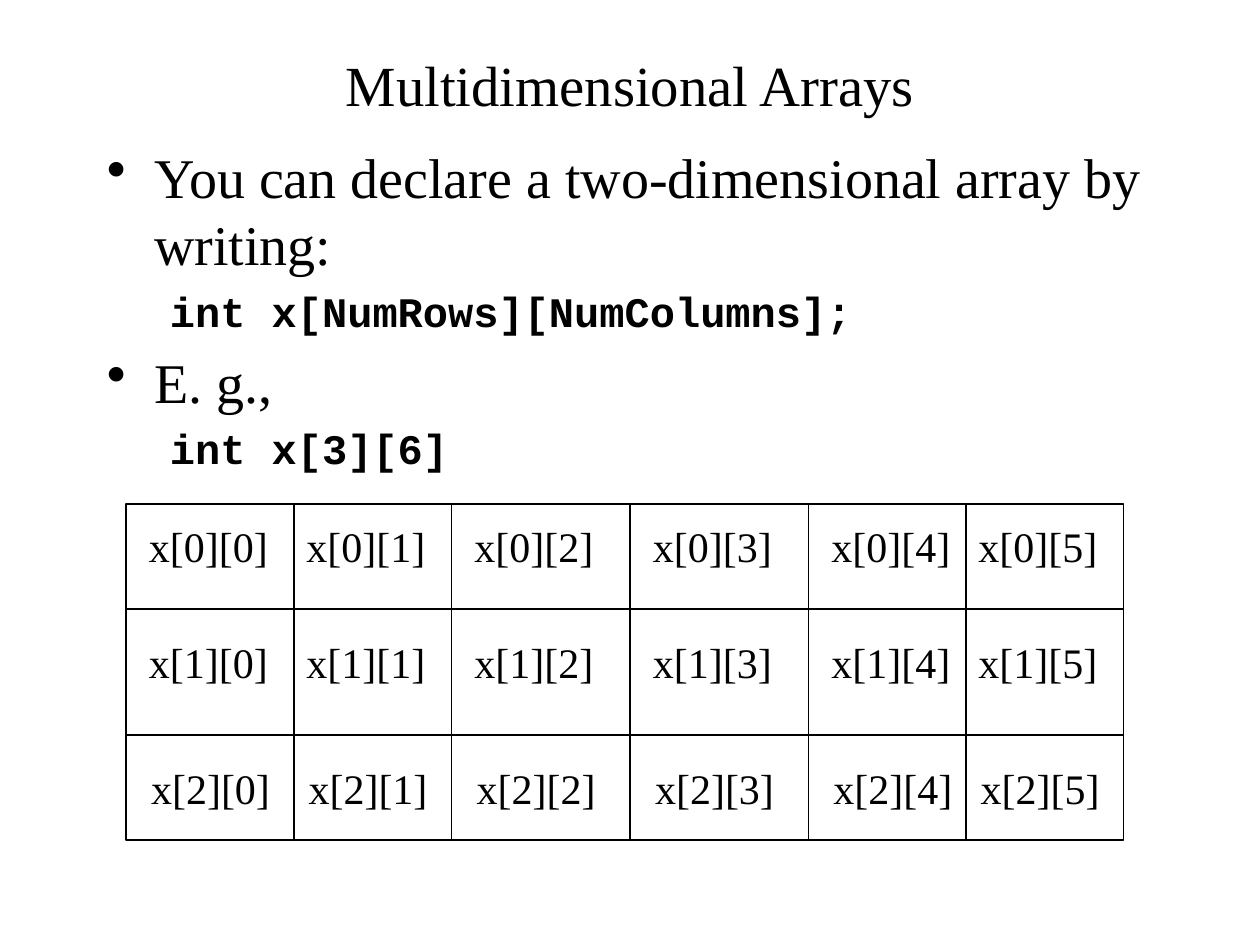
import dataclasses
import pptx
import pptx.dml.color
import pptx.enum.shapes
import pptx.enum.text
import pptx.oxml.ns
import pptx.util
from lxml import etree

PX = 7620
ANCHOR = pptx.enum.text.MSO_ANCHOR
FIT = pptx.enum.text.MSO_AUTO_SIZE
ALIGN = pptx.enum.text.PP_ALIGN


def px(n):
    return pptx.util.Emu(n * PX)


@dataclasses.dataclass(frozen=True)
class Theme:
    ink: str = "000000"
    paper: str = "FFFFFF"
    serif: str = "Times New Roman"
    mono: str = "Courier New"
    title: float = 32.4
    body: float = 32
    small: float = 24
    line: float = 0.75

    def font(self, size, name=None, bold=False):
        return {"name": name or self.serif, "size": pptx.util.Pt(size), "bold": bold}


class Deck:
    """Draw slide elements in one theme, with lengths in px."""

    def __init__(self, theme, width, height):
        self.theme = theme
        self.ink = pptx.dml.color.RGBColor.from_string(theme.ink)
        self.prs = pptx.Presentation()
        self.prs.slide_width, self.prs.slide_height = px(width), px(height)
        self.s = self.prs.slides.add_slide(self.prs.slide_layouts[6])
        fill = self.s.background.fill
        fill.solid()
        fill.fore_color.rgb = pptx.dml.color.RGBColor.from_string(theme.paper)

    def text(self, box, paragraphs, **frame):
        tf = self.s.shapes.add_textbox(*map(px, box)).text_frame
        for key, value in {"word_wrap": True, **frame}.items():
            setattr(tf, key, value)
        for i, (text, font, layout) in enumerate(paragraphs):
            p = tf.paragraphs[0] if i == 0 else tf.add_paragraph()
            r = p.add_run()
            r.text = text
            for key, value in font.items():
                setattr(r.font, key, value)
            r.font.color.rgb = self.ink
            for key, value in layout.items():
                if key == "indent":
                    self.indent(p, *value)
                else:
                    setattr(p, key, value)

    def indent(self, p, left, hang, bullet):
        pPr = p._p.get_or_add_pPr()
        pPr.set("marL", str(px(left)))
        pPr.set("indent", str(px(-hang)))
        qn = pptx.oxml.ns.qn
        before = etree.SubElement(pPr, qn("a:spcBef"))
        etree.SubElement(before, qn("a:spcPct"), val="20000")
        if bullet:
            etree.SubElement(pPr, qn("a:buChar"), char=bullet)
        else:
            etree.SubElement(pPr, qn("a:buNone"))

    def stroke(self, sp):
        sp.line.color.rgb = self.ink
        sp.line.width = pptx.util.Pt(self.theme.line)

    def frame(self, *box):
        sp = self.s.shapes.add_shape(pptx.enum.shapes.MSO_SHAPE.RECTANGLE, *map(px, box))
        sp.shadow.inherit = False
        sp.fill.background()
        self.stroke(sp)

    def line(self, *ends):
        sp = self.s.shapes.add_connector(
            pptx.enum.shapes.MSO_CONNECTOR.STRAIGHT, *map(px, ends))
        etree.SubElement(sp._element.spPr, pptx.oxml.ns.qn("a:effectLst"))
        self.stroke(sp)

    def grid(self, xs, ys):
        self.frame(xs[0], ys[0], xs[-1] - xs[0], ys[-1] - ys[0])
        for x in xs[1:-1]:
            self.line(x, ys[0], x, ys[-1])
        for y in ys[1:-1]:
            self.line(xs[0], y, xs[-1], y)

    def cell(self, x, y, text):
        self.text((x, y, 138, 60), [(text, self.theme.font(self.theme.small), {})],
                  word_wrap=False, auto_size=FIT.SHAPE_TO_FIT_TEXT)


def main():
    theme = Theme()
    deck = Deck(theme, 1200, 900)
    deck.text((90, 50, 1020, 60),
              [("Multidimensional Arrays", theme.font(theme.title), {"alignment": ALIGN.CENTER})],
              vertical_anchor=ANCHOR.MIDDLE)

    point = (theme.font(theme.body), {"indent": (45, 45, "•")})
    code = (theme.font(theme.small, theme.mono, True), {"level": 1, "indent": (97, 37, None)})
    deck.text((90, 130, 1030, 330), [
        ("You can declare a two-dimensional array by writing:", *point),
        ("int\tx[NumRows][NumColumns];", *code),
        ("E. g.,", *point),
        ("int\tx[3][6]", *code),
    ])

    deck.grid((120, 280, 430, 600, 770, 920, 1070), (480, 580, 700, 800))
    for col, x in enumerate((130, 280, 440, 610, 780, 920)):
        for row, (shift, y) in enumerate(((0, 490), (0, 600), (2, 720))):
            deck.cell(x + shift, y, f"x[{row}][{col}]")
    deck.prs.save("out.pptx")


if __name__ == "__main__":
    main()
